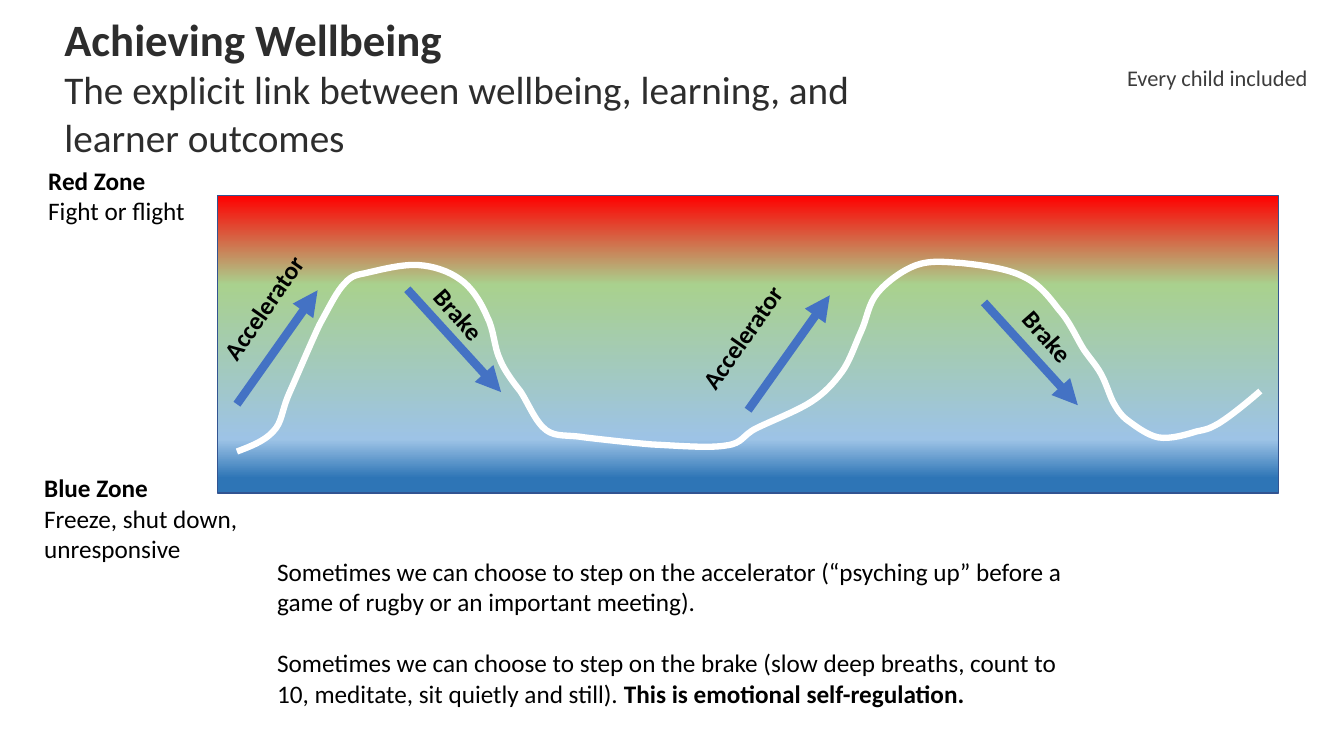
from dataclasses import dataclass

from lxml import etree
from pptx import Presentation
from pptx import util as u
from pptx.dml.color import RGBColor
from pptx.enum import shapes, text
from pptx.oxml.ns import qn

PX = 9144  # EMU per px, 100 px to the inch


@dataclass(frozen=True)
class Theme:
    font: str = "Calibri"
    ink: str = "000000"
    title_ink: str = "2D2D2D"
    motto_ink: str = "3C3C3C"
    border: str = "325491"
    curve: str = "FFFFFF"
    arrow: str = "4472C4"
    zones: tuple = ((0, "FF0000"), (30, "A9D18E"), (82, "9DC3E6"), (95, "2E75B6"))
    title: int = 32
    subtitle: int = 28
    body: int = 18
    motto: int = 16
    blank_line: int = 22


T = Theme()

# Arousal curve inside the band: start point, then control, control, end
CURVE_START = (19, 254)
CURVE = [
    (32, 249), (46, 244), (55, 234), (64, 225), (63, 214), (71, 196),
    (79, 178), (92, 147), (101, 128), (111, 110), (118, 95), (126, 87),
    (134, 78), (139, 79), (151, 76), (164, 73), (184, 68), (199, 69),
    (214, 70), (229, 75), (240, 83), (252, 91), (261, 106), (267, 120),
    (274, 133), (274, 151), (280, 163), (285, 176), (300, 194), (300, 194),
    (308, 206), (315, 225), (326, 233), (336, 240), (346, 237), (364, 240),
    (381, 242), (407, 245), (431, 247), (454, 248), (487, 251), (504, 248),
    (521, 246), (520, 238), (534, 231), (548, 224), (574, 214), (588, 205),
    (602, 196), (610, 187), (619, 175), (627, 164), (632, 148), (638, 135),
    (644, 122), (645, 108), (654, 97), (663, 86), (679, 74), (693, 69),
    (707, 64), (721, 66), (738, 67), (756, 69), (782, 72), (798, 80),
    (814, 87), (824, 100), (834, 113), (845, 125), (852, 142), (859, 153),
    (866, 163), (871, 168), (876, 177), (881, 186), (884, 197), (888, 205),
    (892, 212), (894, 216), (901, 222), (909, 228), (922, 238), (933, 240),
    (945, 242), (961, 237), (971, 234), (981, 232), (982, 232), (993, 226),
    (1004, 219), (1019, 207), (1034, 194),
]

# Label, label width, rotation, then (arrow start, arrow end, label corner) in the band
PEDALS = [
    ("Accelerator", 156, 304.9, [((19, 207), (99, 94), (-28, 84)),
                                 ((526, 213), (607, 99), (447, 113))]),
    ("Brake", 90, 48.6, [((188, 93), (281, 195), (198, 102)),
                         ((760, 106), (853, 208), (782, 124))]),
]


def emu(*lengths):
    return [u.Emu(v * PX) for v in lengths]


def add_text(s, box, paragraphs, rotation=0, gap=0, grow=True):
    """Each paragraph is a list of (text, size, bold, colour) runs."""
    sp = s.shapes.add_textbox(*emu(*box))
    sp.rotation = rotation
    tf = sp.text_frame
    tf.word_wrap = True
    tf.auto_size = (text.MSO_AUTO_SIZE.SHAPE_TO_FIT_TEXT if grow
                    else text.MSO_AUTO_SIZE.NONE)
    for i, runs in enumerate(paragraphs):
        p = tf.add_paragraph() if i else tf.paragraphs[0]
        if i and gap:
            p.space_before = u.Pt(gap)
        for words, size, bold, colour in runs:
            r = p.add_run()
            r.text = words
            for name, value in dict(name=T.font, size=u.Pt(size), bold=bold).items():
                setattr(r.font, name, value)
            r.font.color.rgb = RGBColor.from_string(colour)


def set_line(sp, colour, width):
    sp.line.color.rgb = RGBColor.from_string(colour)
    sp.line.width = u.Pt(width)


def header(s, box):
    x, y, w, h = box
    add_text(s, (x, y, 866, h), [
        [("Achieving Wellbeing", T.title, True, T.title_ink)],
        [("The explicit link between wellbeing, learning, and learner outcomes",
          T.subtitle, False, T.title_ink)],
    ], grow=False)
    add_text(s, (x + w - 225, y + 52, 225, 37),
             [[("Every child included", T.motto, False, T.motto_ink)]])


def zone_label(s, box, name, meaning):
    add_text(s, box, [[(name, T.body, True, T.ink)], [(meaning, T.body, False, T.ink)]])


def zone_band(s, box):
    sp = s.shapes.add_shape(shapes.MSO_SHAPE.RECTANGLE, *emu(*box))
    sp.shadow.inherit = False
    sp.fill.gradient()
    sp.fill.gradient_angle = 270
    stops = next(sp._element.iter(qn("a:gsLst")))
    for stop in list(stops):
        stops.remove(stop)
    for percent, colour in T.zones:
        gs = etree.SubElement(stops, qn("a:gs"), pos=str(percent * 1000))
        etree.SubElement(gs, qn("a:srgbClr"), val=colour)
    set_line(sp, T.border, 1)


def arousal_curve(s, box):
    builder = s.shapes.build_freeform(*CURVE_START, scale=PX)
    builder.add_line_segments(CURVE, close=False)
    sp = builder.convert_to_shape(*emu(*box[:2]))
    sp.shadow.inherit = False
    sp.fill.background()
    set_line(sp, T.curve, 4.5)
    # Turn every three straight segments into one Bézier segment
    outline = next(sp._element.iter(qn("a:path")))
    segments = outline.findall(qn("a:lnTo"))
    for i in range(0, len(segments), 3):
        bezier = etree.SubElement(outline, qn("a:cubicBezTo"))
        for segment in segments[i:i + 3]:
            bezier.append(segment[0])
            outline.remove(segment)


def pedal_arrow(s, start, end):
    cn = s.shapes.add_connector(shapes.MSO_CONNECTOR.STRAIGHT, *emu(*start, *end))
    set_line(cn, T.arrow, 6)
    etree.SubElement(cn.line._get_or_add_ln(), qn("a:tailEnd"), type="triangle")
    etree.SubElement(cn._element.spPr, qn("a:effectLst"))


def pedals(s, box):
    x, y = box[:2]
    for label, width, rotation, places in PEDALS:
        for start, end, corner in places:
            (x1, y1), (x2, y2), (lx, ly) = start, end, corner
            pedal_arrow(s, (x + x1, y + y1), (x + x2, y + y2))
            add_text(s, (x + lx, y + ly, width, 40),
                     [[(label, T.body, True, T.ink)]], rotation)


def zone_diagram(s, box):
    x, y, w, h = box
    zone_band(s, box)
    arousal_curve(s, box)
    zone_label(s, (x - 178, y - 35, 174, 71), "Red Zone", "Fight or flight")
    zone_label(s, (x - 182, y + h - 25, 244, 101),
               "Blue Zone", "Freeze, shut down, unresponsive")
    pedals(s, box)


def explanation(s, box):
    add_text(s, box, [
        [("Sometimes we can choose to step on the accelerator (“psyching up” before a "
          "game of rugby or an important meeting).", T.body, False, T.ink)],
        [("Sometimes we can choose to step on the brake (slow deep breaths, count to "
          "10, meditate, sit quietly and still). ", T.body, False, T.ink),
         ("This is emotional self-regulation.", T.body, True, T.ink)],
    ], gap=T.blank_line)


def main():
    prs = Presentation()
    prs.slide_width, prs.slide_height = emu(1333, 750)
    s = prs.slides.add_slide(prs.slide_layouts[6])
    header(s, (54, 7, 1279, 123))
    zone_diagram(s, (216, 194, 1052, 295))
    explanation(s, (265, 547, 822, 162))
    prs.save("out.pptx")


if __name__ == "__main__":
    main()
